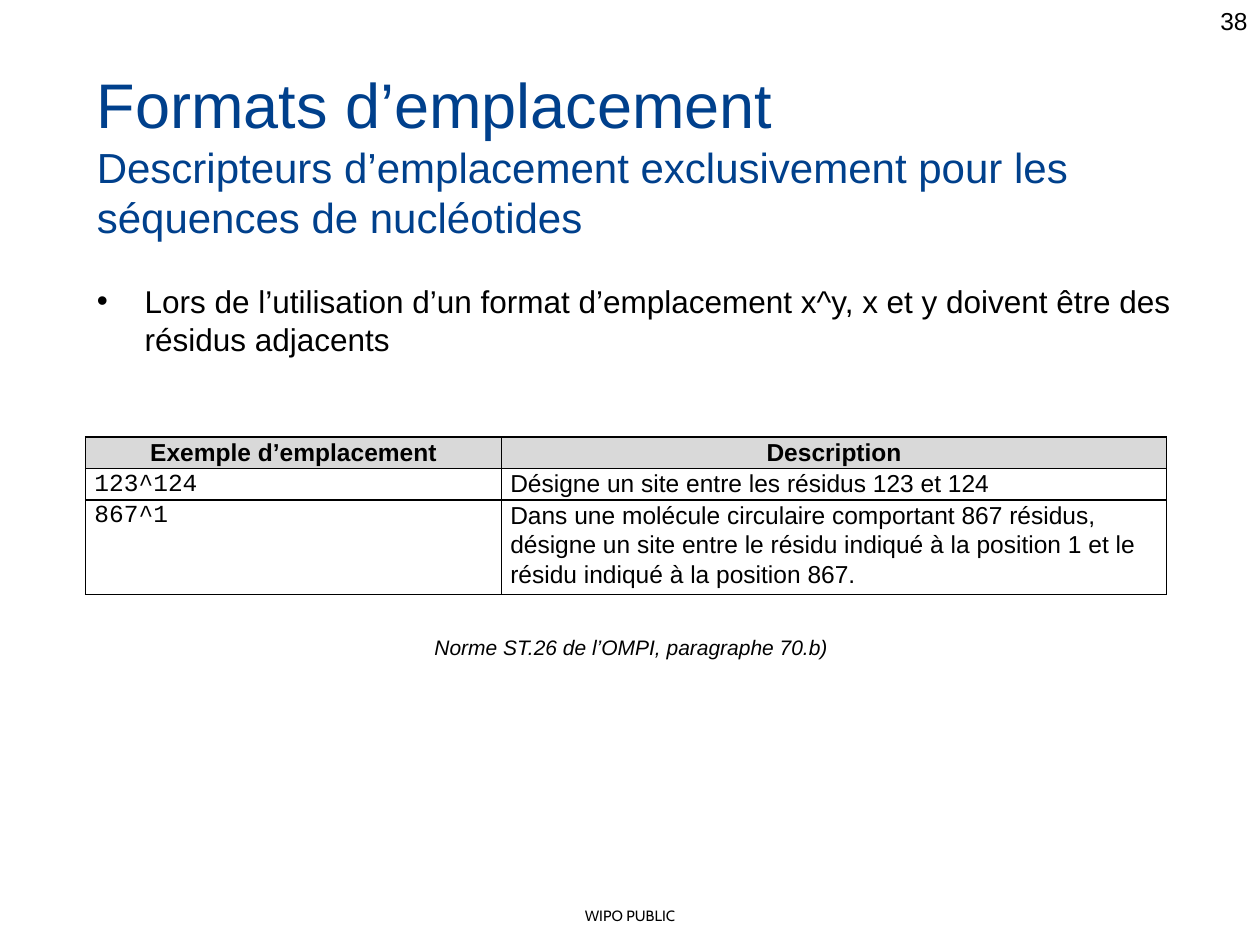
from lxml import etree
from pptx import Presentation
from pptx.dml.color import RGBColor
from pptx.enum.text import PP_ALIGN
from pptx.oxml.ns import qn
from pptx.util import Inches, Pt

LEFT, CENTER, RIGHT = PP_ALIGN.LEFT, PP_ALIGN.CENTER, PP_ALIGN.RIGHT
BLACK, BLUE, GREY, WHITE = "000000", "00408C", "D9D9D9", "FFFFFF"

HEADERS = ["Exemple d’emplacement", "Description"]
ROWS = [
    ["123^124", "Désigne un site entre les résidus\u00a0123 et 124"],
    ["867^1", "Dans une molécule circulaire comportant 867\u00a0résidus, désigne un site "
     "entre le résidu indiqué à la position 1 et le résidu indiqué à la position 867."],
]


def rgb(color):
    """Return the colour for a hex string."""
    return RGBColor.from_string(color)


def style(p, size, color=BLACK, font="Arial", align=LEFT, bold=False, italic=False):
    """Format a paragraph and all its runs."""
    p.alignment = align
    for r in p.runs:
        r.font.size = Pt(size)
        r.font.name = font
        r.font.bold = bold
        r.font.italic = italic
        r.font.color.rgb = rgb(color)


def add_text(slide, box, text, size, **options):
    """Add a wrapped one-paragraph text box and return its frame."""
    tf = slide.shapes.add_textbox(*map(Inches, box)).text_frame
    tf.word_wrap = True
    tf.text = text
    style(tf.paragraphs[0], size, **options)
    return tf


def add_title(slide, box):
    """Add the title with its smaller subtitle."""
    tf = add_text(slide, box, "Formats d’emplacement", 36, color=BLUE)
    p = tf.add_paragraph()
    p.text = "Descripteurs d’emplacement exclusivement pour les séquences de nucléotides"
    style(p, 24, color=BLUE)


def add_bullet(slide, box):
    """Add the bulleted statement."""
    tf = add_text(slide, box, "Lors de l’utilisation d’un format d’emplacement x^y, "
                  "x et y doivent être des résidus adjacents", 18)
    pPr = tf.paragraphs[0]._p.get_or_add_pPr()
    pPr.set("marL", str(Inches(0.38)))
    pPr.set("indent", str(-Inches(0.38)))
    etree.SubElement(pPr, qn("a:buFont"), typeface="Arial")
    etree.SubElement(pPr, qn("a:buChar"), char="•")


def set_borders(cell):
    """Draw a thin black line on each side of a cell."""
    tcPr = cell._tc.get_or_add_tcPr()
    for i, side in enumerate(("lnL", "lnR", "lnT", "lnB")):
        ln = etree.Element(qn("a:" + side), w=str(Pt(1)))
        fill = etree.SubElement(ln, qn("a:solidFill"))
        etree.SubElement(fill, qn("a:srgbClr"), val=BLACK)
        tcPr.insert(i, ln)


def add_examples(slide, box):
    """Add the table of location examples."""
    rows = [HEADERS] + ROWS
    table = slide.shapes.add_table(len(rows), len(HEADERS), *map(Inches, box)).table
    for column, width in zip(table.columns, (3.3, box[2] - 3.3)):
        column.width = Inches(width)
    for row, height in zip(table.rows, (0.25, 0.25, box[3] - 0.5)):
        row.height = Inches(height)
    for i, texts in enumerate(rows):
        header = i == 0
        for j, text in enumerate(texts):
            cell = table.cell(i, j)
            cell.margin_left = cell.margin_right = Inches(0.07)
            cell.margin_top = cell.margin_bottom = 0
            cell.fill.solid()
            cell.fill.fore_color.rgb = rgb(GREY if header else WHITE)
            set_borders(cell)
            p = cell.text_frame.paragraphs[0]
            p.text = text
            p.line_spacing = 1.07
            style(p, 14, font="Arial" if header or j else "Courier New",
                  align=CENTER if header else LEFT, bold=header)


def main():
    """Build and save the slide."""
    prs = Presentation()
    prs.slide_width, prs.slide_height = Inches(10), Inches(7.5)
    slide = prs.slides.add_slide(prs.slide_layouts[6])
    add_text(slide, (0, 7.15, 10, 0.24), "WIPO PUBLIC", 8.5, font="Cabin", align=CENTER)
    add_text(slide, (7.67, 0, 2.33, 0.52), "38", 14, align=RIGHT)
    add_title(slide, (0.67, 0.47, 9, 1.25))
    add_bullet(slide, (0.67, 2.19, 9, 3.77))
    add_text(slide, (3.35, 4.99, 5, 0.3), "Norme ST.26 de l’OMPI, paragraphe\u00a070.b)", 12,
             italic=True)
    add_examples(slide, (0.68, 3.47, 8.58, 1.25))
    prs.save("out.pptx")


if __name__ == "__main__":
    main()
